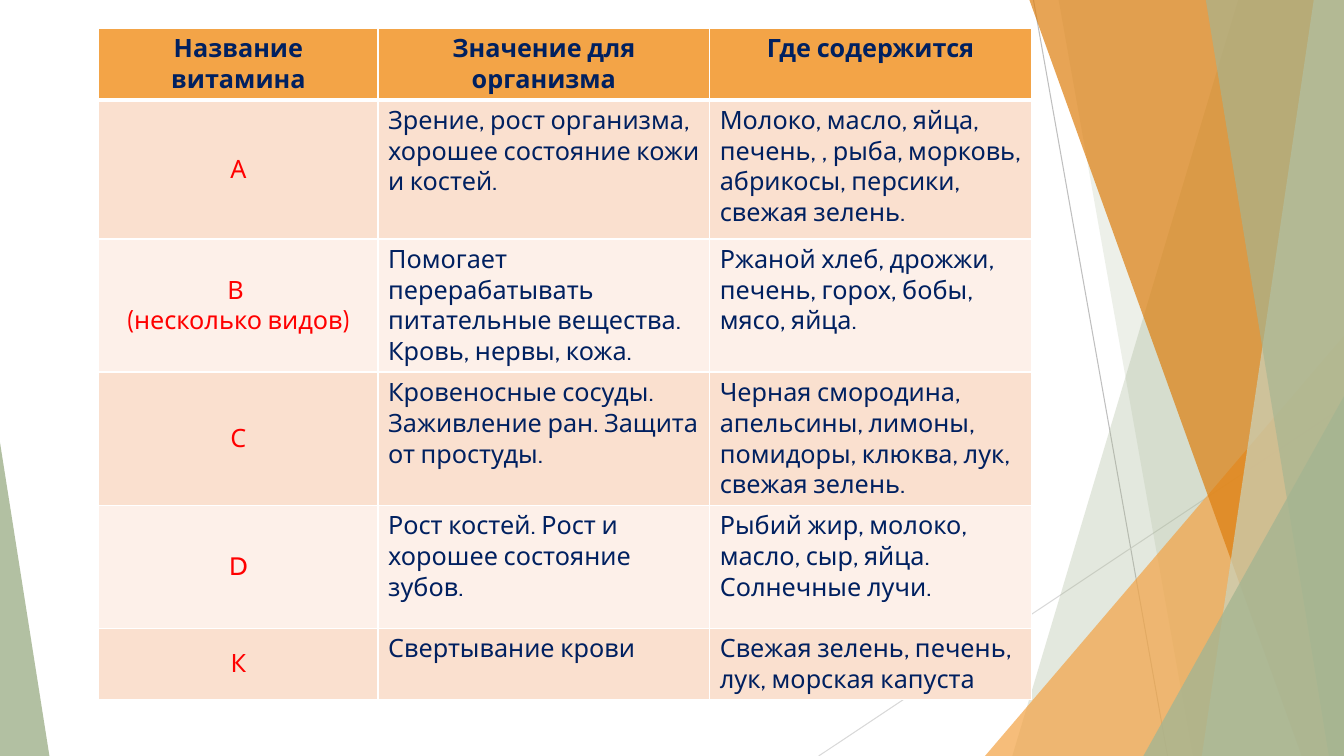
from dataclasses import dataclass

from lxml import etree
from pptx import Presentation
from pptx import util as u
from pptx.dml.color import RGBColor
from pptx.enum import shapes, text
from pptx.oxml.ns import qn

PX = 9144  # 100 px to the inch
WIDE, HIGH = 1333, 750
FONT = "Cabin"
NAVY, RED, WHITE = "002060", "FF0000", "FFFFFF"
SAGE, AMBER = "A5B592", "F3A447"
BANDS = ("FAE0CF", "FDF0E9")


@dataclass
class Line:
    x1: int
    y1: int
    x2: int
    y2: int
    hue: str


@dataclass
class Panel:
    """Full-height strip from a slanted left side to the right slide edge."""
    top: int
    base: int
    hue: str
    alpha: int


@dataclass
class Wedge:
    """Triangle standing on the bottom edge; apex 0 is left, 1 is right."""
    left: int
    top: int
    width: int
    apex: int
    hue: str
    alpha: int


LINES = [
    Line(1025, 0, 1158, HIGH, "BFBFBF"),
    Line(WIDE, 403, 812, HIGH, "D9D9D9"),
]
DECOR = [
    Panel(1228, 1004, SAGE, 30),
    Panel(1050, 1183, SAGE, 20),
    Wedge(977, 333, 356, 1, AMBER, 72),
    Panel(1021, 1291, "DD7E0E", 70),
    Panel(1303, 1192, "C9D3BE", 70),
    Panel(1196, 1318, SAGE, 65),
    Wedge(1134, 393, 199, 1, SAGE, 80),
    Wedge(0, 439, 49, 0, SAGE, 85),
]

COLS = [277, 329, 319]
ROWS = [70, 138, 132, 132, 122, 70]
DATA = [
    ("Название витамина", "Значение для организма", "Где содержится"),
    ("А", "Зрение, рост организма, хорошее состояние кожи и костей.",
     "Молоко, масло, яйца, печень, , рыба, морковь, абрикосы, персики, "
     "свежая зелень."),
    ("В \n(несколько видов)",
     "Помогает перерабатывать питательные вещества. Кровь, нервы, кожа.",
     "Ржаной хлеб, дрожжи, печень, горох, бобы, мясо, яйца."),
    ("С", "Кровеносные сосуды. Заживление ран. Защита от простуды.",
     "Черная смородина, апельсины, лимоны, помидоры, клюква, лук, "
     "свежая зелень."),
    ("D", "Рост костей. Рост и хорошее состояние зубов.",
     "Рыбий жир, молоко, масло, сыр, яйца. Солнечные лучи."),
    ("К", "Свертывание крови", "Свежая зелень, печень, лук, морская капуста"),
]


def px(n: int) -> int:
    return u.Emu(n * PX)


def paint(fill, hue: str) -> None:
    fill.solid()
    fill.fore_color.rgb = RGBColor.from_string(hue)


def draw_line(slide, item: Line) -> None:
    ends = map(px, (item.x1, item.y1, item.x2, item.y2))
    line = slide.shapes.add_connector(shapes.MSO_CONNECTOR.STRAIGHT, *ends)
    paint(line.line.fill, item.hue)
    line.line.width = u.Pt(0.75)
    etree.SubElement(line._element.spPr, qn("a:effectLst"))


def draw_decor(slide, item: Panel | Wedge) -> None:
    if isinstance(item, Panel):
        pen = slide.shapes.build_freeform(item.top, 0, scale=PX)
        pen.add_line_segments([(WIDE, 0), (WIDE, HIGH), (item.base, HIGH)])
        shape = pen.convert_to_shape()
    else:
        box = map(px, (item.left, item.top, item.width, HIGH - item.top))
        shape = slide.shapes.add_shape(
            shapes.MSO_SHAPE.ISOSCELES_TRIANGLE, *box)
        shape.adjustments[0] = item.apex
    shape.shadow.inherit = False
    shape.line.fill.background()
    paint(shape.fill, item.hue)
    tint = shape._element.spPr.find(f"{qn('a:solidFill')}/{qn('a:srgbClr')}")
    etree.SubElement(tint, qn("a:alpha"), val=str(item.alpha * 1000))


def edge_cell(cell, row: int) -> None:
    """White borders, with a thick rule under the header."""
    widths = {"L": 1, "R": 1, "T": 3 if row == 1 else 1,
              "B": 3 if row == 0 else 1}
    props = cell._tc.get_or_add_tcPr()
    for i, (side, width) in enumerate(widths.items()):
        edge = etree.Element(qn(f"a:ln{side}"), w=str(u.Pt(width)))
        fill = etree.SubElement(edge, qn("a:solidFill"))
        etree.SubElement(fill, qn("a:srgbClr"), val=WHITE)
        props.insert(i, edge)


def fill_cell(cell, row: int, col: int, words: str) -> None:
    head, name = row == 0, row > 0 and col == 0
    paint(cell.fill, AMBER if head else BANDS[(row - 1) % 2])
    edge_cell(cell, row)
    if name:
        cell.vertical_anchor = text.MSO_ANCHOR.MIDDLE
    frame = cell.text_frame
    for i, part in enumerate(words.split("\n")):
        para = frame.add_paragraph() if i else frame.paragraphs[0]
        if head or name:
            para.alignment = text.PP_ALIGN.CENTER
        run = para.add_run()
        run.text = part
        run.font.name = FONT
        run.font.size = u.Pt(18)
        run.font.bold = head
        run.font.color.rgb = RGBColor.from_string(RED if name else NAVY)


def draw_table(slide) -> None:
    box = map(px, (98, 28, sum(COLS), sum(ROWS)))
    table = slide.shapes.add_table(len(ROWS), len(COLS), *box).table
    table.horz_banding = False
    for col, width in zip(table.columns, COLS):
        col.width = px(width)
    for row, height in zip(table.rows, ROWS):
        row.height = px(height)
    for r, line in enumerate(DATA):
        for c, words in enumerate(line):
            fill_cell(table.cell(r, c), r, c, words)


def main() -> None:
    deck = Presentation()
    deck.slide_width, deck.slide_height = px(WIDE), px(HIGH)
    slide = deck.slides.add_slide(deck.slide_layouts[6])
    # Background decoration
    for item in LINES:
        draw_line(slide, item)
    for item in DECOR:
        draw_decor(slide, item)
    # Vitamin table
    draw_table(slide)
    deck.save("out.pptx")


if __name__ == "__main__":
    main()
